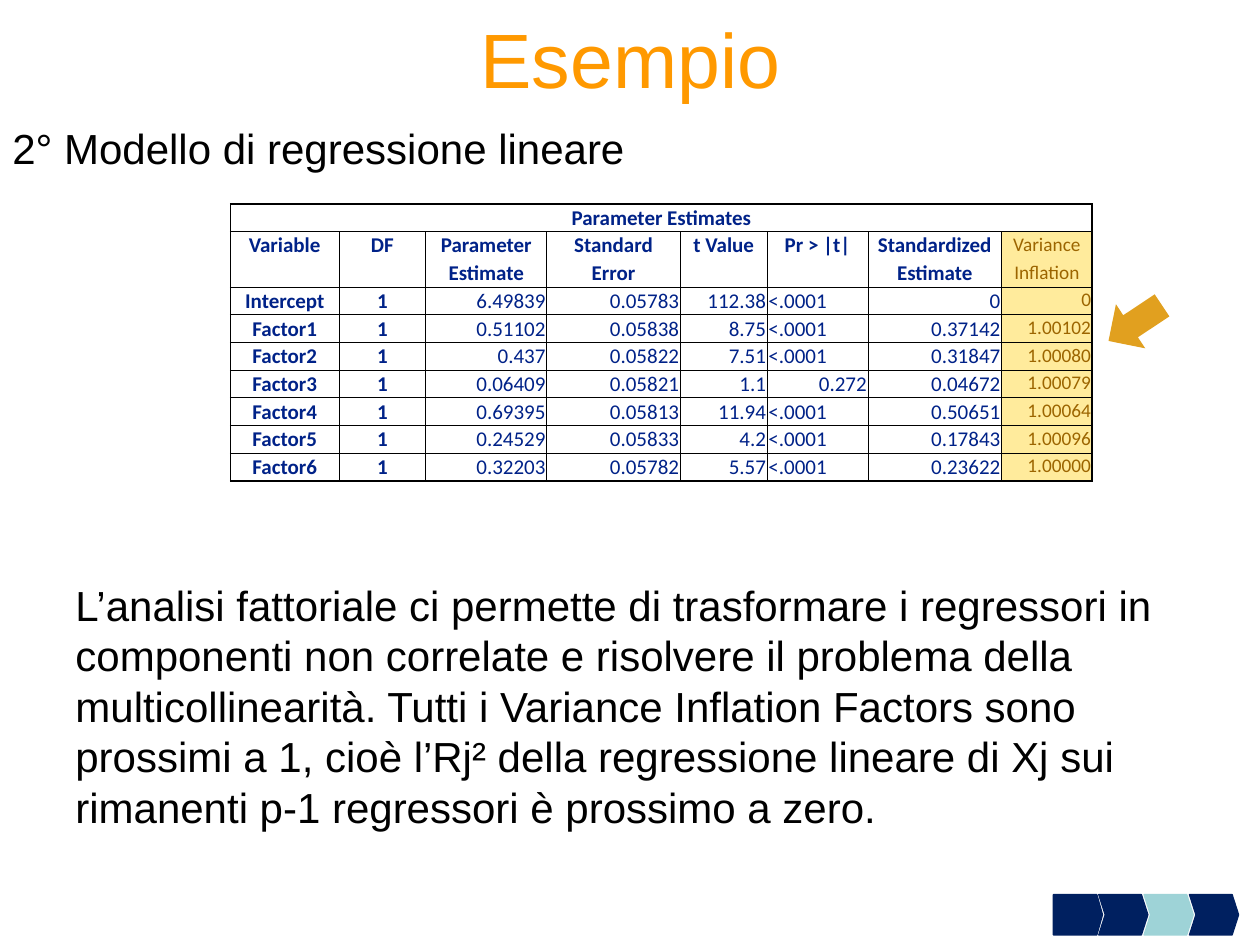
"""Build the slide on the second linear regression model and its variance inflation."""
from lxml import etree
from pptx import Presentation
from pptx.dml.color import RGBColor
from pptx.enum import shapes, text
from pptx.oxml import ns
from pptx.util import Inches, Pt

ORANGE = RGBColor(0xFF, 0x99, 0x00)
BLACK = RGBColor(0, 0, 0)
WHITE = RGBColor(0xFF, 0xFF, 0xFF)
BLUE = RGBColor(0x00, 0x22, 0x88)
CREAM = RGBColor(0xFF, 0xEB, 0x9C)
BROWN = RGBColor(0x9C, 0x65, 0x00)
GOLD = RGBColor(0xE1, 0xA0, 0x1F)
NAVY = RGBColor(0x00, 0x20, 0x60)
TEAL = RGBColor(0x9E, 0xD3, 0xD7)
LEFT, MID, RIGHT = text.PP_ALIGN.LEFT, text.PP_ALIGN.CENTER, text.PP_ALIGN.RIGHT

deck = Presentation()
deck.slide_width, deck.slide_height = Inches(10), Inches(7.5)
slide = deck.slides.add_slide(deck.slide_layouts[6])


def style(par, size, color, face="Arial", bold=False, align=LEFT):
    par.alignment = align
    for run in par.runs:
        run.font.size, run.font.name, run.font.bold = Pt(size), face, bold
        run.font.color.rgb = color


def border(cell, side, width):
    line = etree.SubElement(cell._tc.get_or_add_tcPr(), ns.qn("a:ln" + side))
    if not width:
        etree.SubElement(line, ns.qn("a:noFill"))
        return
    line.set("w", str(Pt(width)))
    fill = etree.SubElement(line, ns.qn("a:solidFill"))
    etree.SubElement(fill, ns.qn("a:srgbClr")).set("val", str(BLACK))


body = (
    "L’analisi fattoriale ci permette di trasformare i regressori in componenti "
    "non correlate e risolvere il problema della multicollinearità. Tutti i "
    "Variance Inflation Factors sono prossimi a 1, cioè l’Rj² della regressione "
    "lineare di Xj sui rimanenti p-1 regressori è prossimo a zero."
)
for words, x, y, w, h, size, color, align in [
    ("Esempio", 0.17, -0.17, 9.67, 1.25, 44, ORANGE, MID),
    (body, 0.5, 4.55, 8.92, 2.12, 24, BLACK, LEFT),
    ("2° Modello di regressione lineare", 0, 0.92, 10, 0.51, 24, BLACK, LEFT),
]:
    frame = slide.shapes.add_textbox(Inches(x), Inches(y), Inches(w), Inches(h)).text_frame
    frame.word_wrap = True
    frame.text = words
    if size == 44:
        frame.vertical_anchor = text.MSO_ANCHOR.MIDDLE
    style(frame.paragraphs[0], size, color, align=align)

rows = [
    ["Parameter Estimates"] + [""] * 7,
    ["Variable", "DF", "Parameter", "Standard", "t\u00a0Value", "Pr\u00a0>\u00a0|t|",
     "Standardized", "Variance"],
    ["", "", "Estimate", "Error", "", "", "Estimate", "Inflation"],
    ["Intercept", "1", "6.49839", "0.05783", "112.38", "<.0001", "0", "0"],
    ["Factor1", "1", "0.51102", "0.05838", "8.75", "<.0001", "0.37142", "1.00102"],
    ["Factor2", "1", "0.437", "0.05822", "7.51", "<.0001", "0.31847", "1.00080"],
    ["Factor3", "1", "0.06409", "0.05821", "1.1", "0.272", "0.04672", "1.00079"],
    ["Factor4", "1", "0.69395", "0.05813", "11.94", "<.0001", "0.50651", "1.00064"],
    ["Factor5", "1", "0.24529", "0.05833", "4.2", "<.0001", "0.17843", "1.00096"],
    ["Factor6", "1", "0.32203", "0.05782", "5.57", "<.0001", "0.23622", "1.00000"],
]
widths = [0.86, 0.69, 0.96, 1.06, 0.69, 0.8, 1.06, 0.72]
last, end = len(rows) - 1, len(widths) - 1
grid = slide.shapes.add_table(
    len(rows), len(widths), Inches(1.83), Inches(1.62), Inches(6.85), Inches(2.21)
).table
grid.first_row = grid.horz_banding = False
for col, width in zip(grid.columns, widths):
    col.width = Inches(width)
for row in grid.rows:
    row.height = Inches(0.22)
grid.cell(0, 0).merge(grid.cell(0, end))
for c in (0, 1, 4, 5):
    grid.cell(1, c).merge(grid.cell(2, c))

for r, row in enumerate(rows):
    for c, words in enumerate(row):
        cell = grid.cell(r, c)
        cell.margin_left = cell.margin_right = cell.margin_top = Inches(0.01)
        cell.margin_bottom = 0
        border(cell, "L", 1 if c == 0 else 0.5)
        border(cell, "R", 1 if c == end or r == 0 else 0.5)
        border(cell, "T", 1 if r == 0 else 0 if r == 2 else 0.5)
        border(cell, "B", 1 if r == last else 0 if r == 1 else 0.5)
        vif = c == end and r > 0
        cell.fill.solid()
        cell.fill.fore_color.rgb = CREAM if vif else WHITE
        if words:
            cell.text_frame.text = words
            head = r < 3 or c < 2
            align = MID if head else LEFT if words[0] == "<" else RIGHT
            style(cell.text_frame.paragraphs[0], 11 if vif else 12,
                  BROWN if vif else BLUE, "Calibri", head and not vif, align)

kind = shapes.MSO_SHAPE
arrow = slide.shapes.add_shape(
    kind.DOWN_ARROW, Inches(8.8), Inches(2.31), Inches(0.42), Inches(0.51))
arrow.rotation = 56.4
arrow.shadow.inherit = False
arrow.fill.solid()
arrow.fill.fore_color.rgb = GOLD
arrow.line.fill.background()

for step in (2, 0, 1, 3):
    form, bend = (kind.CHEVRON, 0.16) if step else (kind.PENTAGON, 0.14)
    color = TEAL if step == 2 else NAVY
    mark = slide.shapes.add_shape(
        form, Inches(8.36 + 0.36 * step), Inches(7.1), Inches(0.39), Inches(0.32))
    mark.adjustments[0] = bend
    mark.shadow.inherit = False
    mark.fill.solid()
    mark.fill.fore_color.rgb = mark.line.color.rgb = color
    mark.line.width = Pt(0.75)

deck.save("out.pptx")
